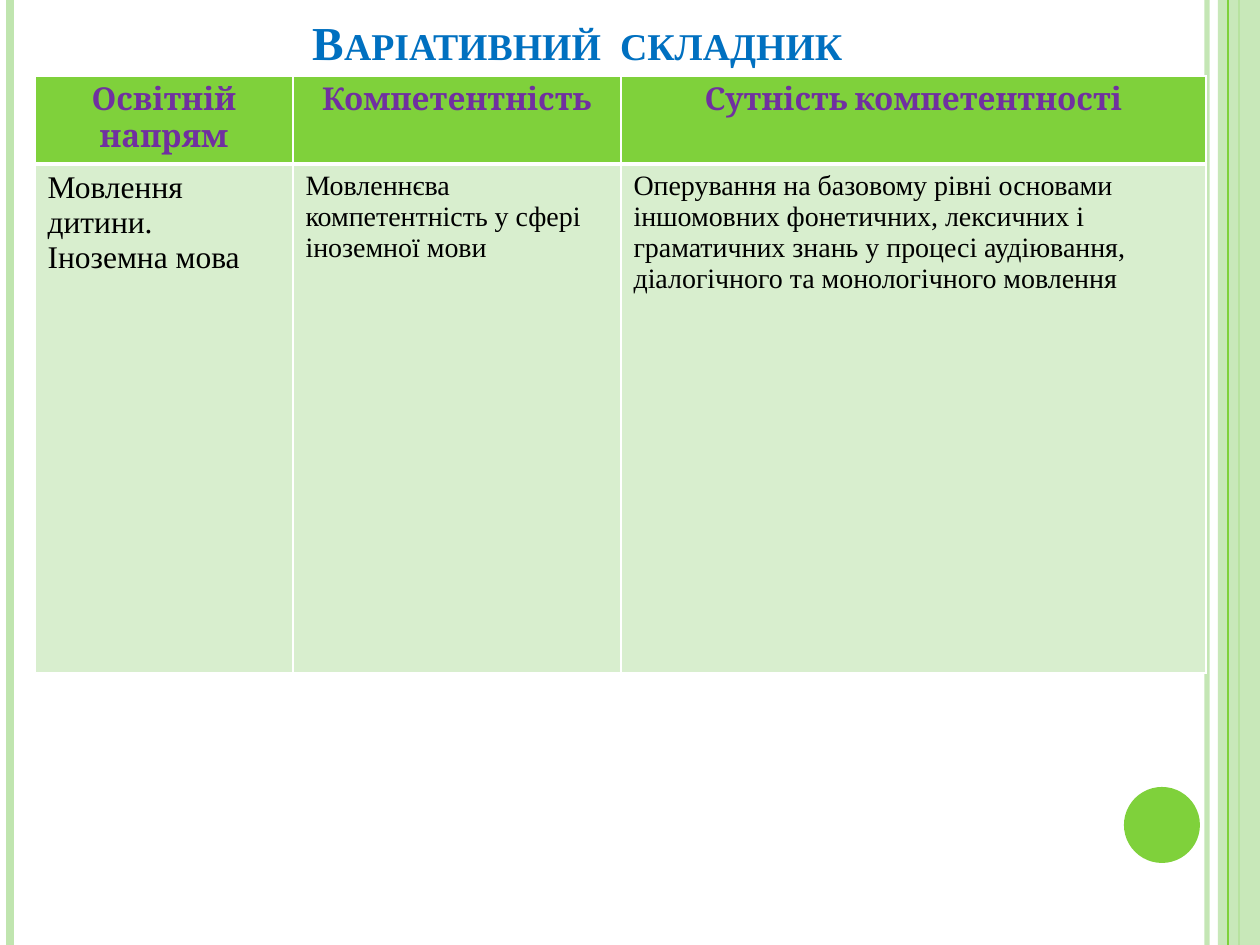
from dataclasses import dataclass
from lxml.etree import SubElement
from pptx import Presentation
from pptx.dml.color import RGBColor
from pptx.enum.shapes import MSO_CONNECTOR, MSO_SHAPE
from pptx.enum.text import MSO_ANCHOR, MSO_AUTO_SIZE, PP_ALIGN
from pptx.oxml import parse_xml
from pptx.oxml.ns import nsdecls, qn
from pptx.util import Emu, Pt

SCALE = 914400 / 126
WIDTH, HEIGHT = 1260, 945


@dataclass(frozen=True)
class Theme:
    white: str = "FFFFFF"
    black: str = "000000"
    green: str = "7FD13B"
    pale: str = "C0E5AF"
    cell: str = "D8EECE"
    blue: str = "0070C0"
    purple: str = "7030A0"
    serif: str = "Times New Roman"
    head: str = "Cambria"
    title: int = 27
    large: int = 18
    small: int = 16


@dataclass(frozen=True)
class Stripe:
    left: int
    color: str
    weight: float
    alpha: int = 100


@dataclass(frozen=True)
class Style:
    font: str
    size: int
    color: str
    bold: bool = False
    align: PP_ALIGN = PP_ALIGN.LEFT


@dataclass(frozen=True)
class Entry:
    text: str
    style: Style
    fill: str
    top: int
    bottom: int


THEME = Theme()
TITLE = Style(THEME.serif, THEME.title, THEME.blue, True, PP_ALIGN.CENTER)
HEAD = Style(THEME.head, THEME.large, THEME.purple, True, PP_ALIGN.CENTER)
LARGE = Style(THEME.serif, THEME.large, THEME.black)
SMALL = Style(THEME.serif, THEME.small, THEME.black)

BACK = [
    Stripe(1207, THEME.pale, 3, 93),
    Stripe(10, THEME.pale, 4.5),
    Stripe(1239, THEME.green, 1.5),
]
FRONT = Stripe(1228, THEME.green, 0.75)

COLS = [258, 328, 585]
ROWS = [88, 509]
HEADS = ["Освітній напрям", "Компетентність", "Сутність компетентності"]
BODY = [
    ("Мовлення дитини.\nІноземна мова", LARGE),
    ("Мовленнєва компетентність у сфері іноземної мови", SMALL),
    ("Оперування на базовому рівні основами іншомовних фонетичних, "
     "лексичних і граматичних знань у процесі аудіювання, "
     "діалогічного та монологічного мовлення", SMALL),
]


def px(count: int) -> Emu:
    return Emu(round(count * SCALE))


def rgb(color: str) -> RGBColor:
    return RGBColor.from_string(color)


def fade(props, alpha: int) -> None:
    color = next(props.iter(qn("a:srgbClr")))
    SubElement(color, qn("a:alpha")).set("val", str(alpha * 1000))


def write(frame, text: str, style: Style) -> None:
    frame.text = text
    for para in frame.paragraphs:
        para.alignment = style.align
        for run in para.runs:
            run.font.name = style.font
            run.font.size = Pt(style.size)
            run.font.bold = style.bold
            run.font.color.rgb = rgb(style.color)


def draw_stripe(slide, stripe: Stripe) -> None:
    left = px(stripe.left)
    line = slide.shapes.add_connector(
        MSO_CONNECTOR.STRAIGHT, left, 0, left, px(HEIGHT))
    line.line.color.rgb = rgb(stripe.color)
    line.line.width = Pt(stripe.weight)
    props = line._element.spPr
    if stripe.alpha < 100:
        fade(props, stripe.alpha)
    SubElement(props, qn("a:effectLst"))


def draw_shape(slide, kind: MSO_SHAPE, box: tuple[int, ...], color: str,
               alpha: int = 100) -> None:
    shape = slide.shapes.add_shape(kind, *map(px, box))
    shape.shadow.inherit = False
    shape.fill.solid()
    shape.fill.fore_color.rgb = rgb(color)
    shape.line.fill.background()
    if alpha < 100:
        fade(shape._element.spPr, alpha)


def draw_title(slide, text: str) -> None:
    title = slide.shapes.title
    title.left, title.top, title.width, title.height = map(px, (63, 16, 1029, 60))
    frame = title.text_frame
    frame.auto_size = MSO_AUTO_SIZE.NONE
    frame.vertical_anchor = MSO_ANCHOR.BOTTOM
    write(frame, text, TITLE)
    for run in frame.paragraphs[0].runs:
        run._r.get_or_add_rPr().set("cap", "small")


def draw_cell(cell, entry: Entry) -> None:
    write(cell.text_frame, entry.text, entry.style)
    cell.fill.solid()
    cell.fill.fore_color.rgb = rgb(entry.fill)
    props = cell._tc.get_or_add_tcPr()
    edges = [("L", 1), ("R", 1), ("T", entry.top), ("B", entry.bottom)]
    for spot, (side, weight) in enumerate(edges):
        props.insert(spot, parse_xml(
            f'<a:ln{side} {nsdecls("a")} w="{Pt(weight)}"><a:solidFill>'
            f'<a:srgbClr val="{THEME.white}"/></a:solidFill></a:ln{side}>'))


def draw_table(slide) -> None:
    table = slide.shapes.add_table(
        len(ROWS), len(COLS), px(35), px(76), px(sum(COLS)), px(sum(ROWS))).table
    for col, width in zip(table.columns, COLS):
        col.width = px(width)
    for row, height in zip(table.rows, ROWS):
        row.height = px(height)
    grid = [
        [Entry(text, HEAD, THEME.green, 1, 3) for text in HEADS],
        [Entry(text, style, THEME.cell, 3, 1) for text, style in BODY],
    ]
    for row, line in zip(table.rows, grid):
        for cell, entry in zip(row.cells, line):
            draw_cell(cell, entry)


def main() -> None:
    deck = Presentation()
    deck.slide_width, deck.slide_height = px(WIDTH), px(HEIGHT)
    slide = deck.slides.add_slide(deck.slide_layouts[5])
    for stripe in BACK:
        draw_stripe(slide, stripe)
    draw_shape(slide, MSO_SHAPE.RECTANGLE, (1218, 0, 42, HEIGHT), THEME.pale, 87)
    draw_stripe(slide, FRONT)
    draw_shape(slide, MSO_SHAPE.OVAL, (1124, 787, 76, 76), THEME.green)
    draw_title(slide, "Варіативний  складник")
    draw_table(slide)
    deck.save("out.pptx")


if __name__ == "__main__":
    main()
